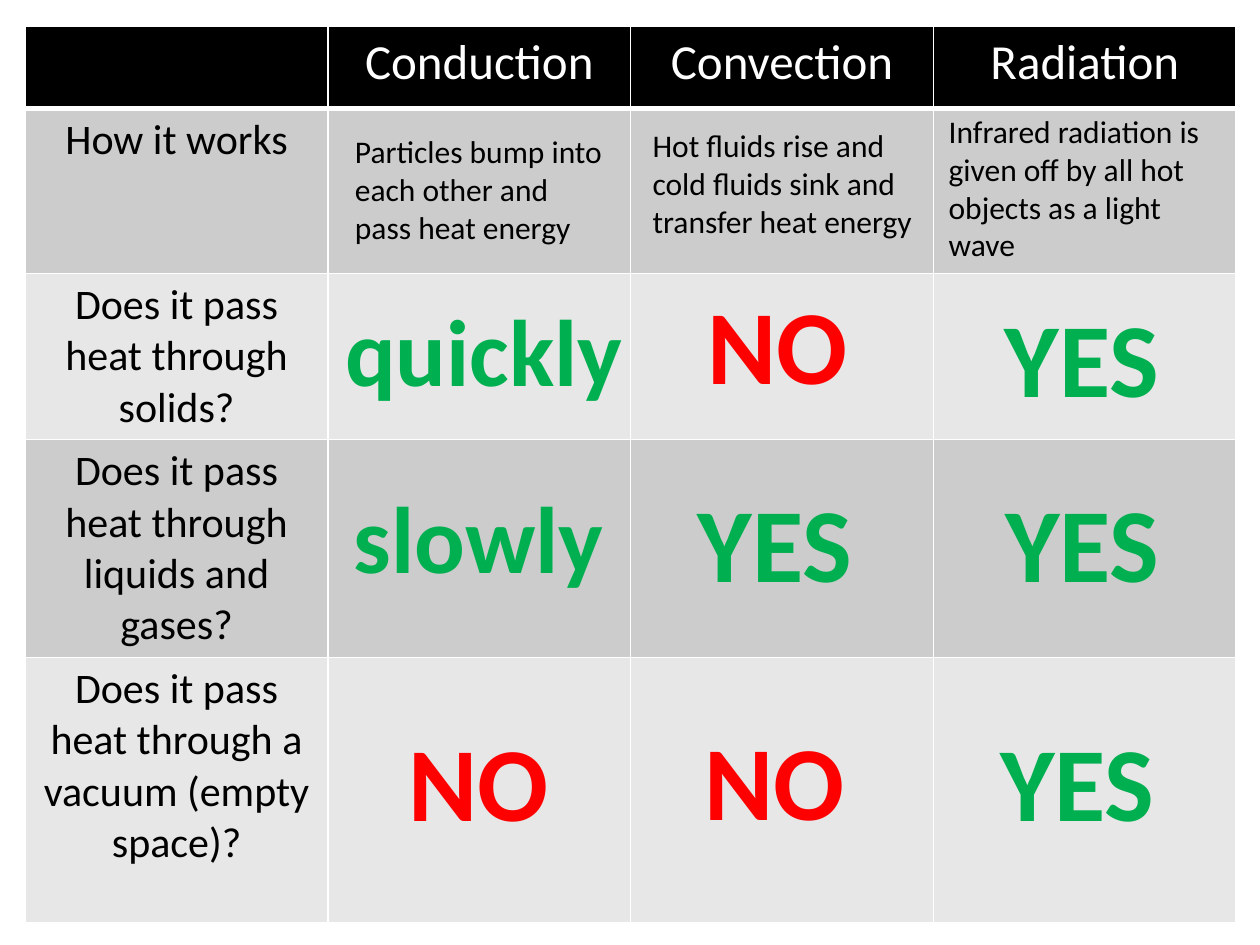
from pptx import Presentation
from pptx.dml.color import RGBColor
from pptx.enum.text import MSO_AUTO_SIZE as AutoSize, PP_ALIGN as Align
from pptx.oxml.xmlchemy import OxmlElement
from pptx.util import Pt

BLACK = RGBColor(0x00, 0x00, 0x00)
WHITE = RGBColor(0xFF, 0xFF, 0xFF)
DARK_BAND = RGBColor(0xCC, 0xCC, 0xCC)
LIGHT_BAND = RGBColor(0xE7, 0xE7, 0xE7)
GREEN = RGBColor(0x00, 0xB0, 0x50)
RED = RGBColor(0xFF, 0x00, 0x00)
FONT = "Calibri"

HEADERS = ["", "Conduction", "Convection", "Radiation"]
QUESTIONS = [
    "How it works",
    "Does it pass heat through solids?",
    "Does it pass heat through liquids and gases?",
    "Does it pass heat through a vacuum (empty space)?",
]
COL_WIDTH = 173
ROW_HEIGHTS = [46.8, 94.3, 94.3, 123.1, 151.9]

# text, left, top, width, height
EXPLANATIONS = [
    ("Particles bump into each other and pass heat energy", 195.8, 72, 156.2, 72.7),
    ("Hot fluids rise and cold fluids sink and transfer heat energy", 365.8, 68.4, 164.2, 72.7),
    ("Infrared radiation is given off by all hot objects as a light wave", 535, 60.5, 176.4, 94.5),
]
# text, left, top, width
ANSWERS = [
    ("quickly", 185.8, 163.4, 181.4),
    ("NO", 379.4, 156.2, 129.6),
    ("YES", 545.8, 163.4, 144.7),
    ("slowly", 187.9, 270, 171.4),
    ("YES", 378, 269.3, 129.6),
    ("YES", 553.7, 269.3, 129.6),
    ("NO", 208.8, 406.1, 129.6),
    ("NO", 378, 405.4, 129.6),
    ("YES", 524.2, 406.1, 182.9),
]


def add_run(p, text, size, color, bold=False):
    r = p.add_run()
    r.text = text
    r.font.name = FONT
    r.font.size = Pt(size)
    r.font.bold = bold
    r.font.color.rgb = color


def set_borders(cell, bottom):
    """Draw white borders, 1 pt except for the given bottom width."""
    tc_pr = cell._tc.get_or_add_tcPr()
    widths = [("a:lnL", 1), ("a:lnR", 1), ("a:lnT", 1), ("a:lnB", bottom)]
    for i, (tag, width) in enumerate(widths):
        ln = OxmlElement(tag)
        ln.set("w", str(Pt(width)))
        fill = OxmlElement("a:solidFill")
        color = OxmlElement("a:srgbClr")
        color.set("val", str(WHITE))
        fill.append(color)
        ln.append(fill)
        tc_pr.insert(i, ln)


def fill_cell(cell, text, size, color, background, bottom=1):
    cell.fill.solid()
    cell.fill.fore_color.rgb = background
    cell.margin_left = cell.margin_right = Pt(5.2)
    cell.margin_top = cell.margin_bottom = Pt(3.6)
    set_borders(cell, bottom)
    if text:
        p = cell.text_frame.paragraphs[0]
        p.alignment = Align.CENTER
        add_run(p, text, size, color)


def add_comparison_table(s):
    frame = s.shapes.add_table(
        len(ROW_HEIGHTS), len(HEADERS), Pt(14.4), Pt(15.1),
        Pt(COL_WIDTH * len(HEADERS)), Pt(sum(ROW_HEIGHTS)))
    table = frame.table
    for col in table.columns:
        col.width = Pt(COL_WIDTH)
    for row, height in zip(table.rows, ROW_HEIGHTS):
        row.height = Pt(height)
    for c, header in enumerate(HEADERS):
        fill_cell(table.cell(0, c), header, 28, WHITE, BLACK, bottom=3)
    for r, question in enumerate(QUESTIONS, start=1):
        band = DARK_BAND if r % 2 else LIGHT_BAND
        for c in range(len(HEADERS)):
            fill_cell(table.cell(r, c), "" if c else question, 24, BLACK, band)


def add_text(s, text, left, top, width, height, size, color, bold=False, align=Align.LEFT):
    tf = s.shapes.add_textbox(Pt(left), Pt(top), Pt(width), Pt(height)).text_frame
    tf.word_wrap = True
    tf.auto_size = AutoSize.SHAPE_TO_FIT_TEXT
    p = tf.paragraphs[0]
    p.alignment = align
    add_run(p, text, size, color, bold)


def add_answer(s, text, left, top, width):
    size, height = (54, 72.7) if text.islower() else (60, 80)
    color = RED if text == "NO" else GREEN
    add_text(s, text, left, top, width, height, size, color, True, Align.CENTER)


def main():
    prs = Presentation()
    prs.slide_width, prs.slide_height = Pt(720), Pt(540)
    s = prs.slides.add_slide(prs.slide_layouts[6])
    add_comparison_table(s)
    for explanation in EXPLANATIONS:
        add_text(s, *explanation, 18, BLACK)
    for answer in ANSWERS:
        add_answer(s, *answer)
    prs.save("out.pptx")


if __name__ == "__main__":
    main()
